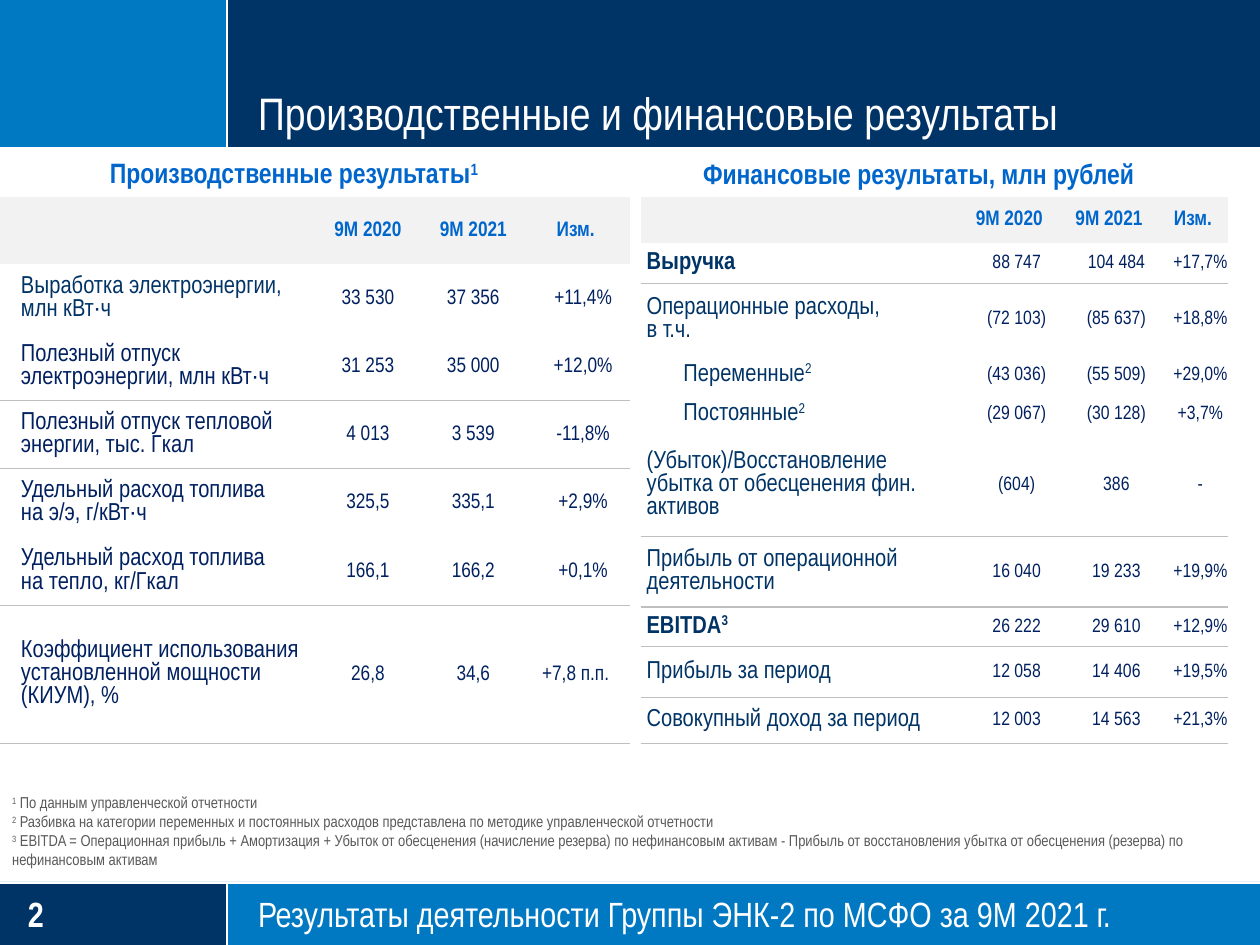
from pptx import Presentation
from pptx.dml.color import RGBColor
from pptx.enum.shapes import MSO_CONNECTOR, MSO_SHAPE
from pptx.enum.text import MSO_ANCHOR, PP_ALIGN
from pptx.oxml import parse_xml
from pptx.oxml.ns import nsdecls, qn
from pptx.util import Pt

RECTANGLE = MSO_SHAPE.RECTANGLE
STRAIGHT = MSO_CONNECTOR.STRAIGHT
TOP, MIDDLE, BOTTOM = MSO_ANCHOR.TOP, MSO_ANCHOR.MIDDLE, MSO_ANCHOR.BOTTOM
LEFT, CENTER = PP_ALIGN.LEFT, PP_ALIGN.CENTER

FONT = "Arial Narrow"
NAVY, BLUE, WHITE = "003366", "0079C2", "FFFFFF"
HEADING, FIGURE, FOOTNOTE = "0066CC", "002060", "595959"
HEADER_FILL, RULE = "F2F2F2", "BFBFBF"
PLAIN_TABLE_STYLE = "{2D5ABB26-0587-4C30-8999-92F81FD0307C}"


def color(value):
    return RGBColor.from_string(value)


def write(frame, text, size, text_color, bold=False, align=LEFT):
    """Fill a text frame; text between ^ marks is superscript."""
    for index, line in enumerate(text.split("\n")):
        paragraph = frame.add_paragraph() if index else frame.paragraphs[0]
        paragraph.alignment = align
        parts = line.split("^")
        paragraph.text = parts[0]
        for number, part in enumerate(parts[1:], 1):
            if part:
                run = paragraph.add_run()
                run.text = part
                if number % 2:
                    run._r.get_or_add_rPr().set("baseline", "30000")
        for run in paragraph.runs:
            run.font.name = FONT
            run.font.size = Pt(size)
            run.font.bold = bold
            run.font.color.rgb = color(text_color)


presentation = Presentation()
presentation.slide_width, presentation.slide_height = Pt(720), Pt(540)
slide = presentation.slides.add_slide(presentation.slide_layouts[5])

# Header and footer bands
for left, top, width, height, fill in [
    (0, 0, 720, 85, NAVY),
    (0, 504, 720, 36, BLUE),
    (0, 504.5, 129.5, 35.5, NAVY),
    (0, 0, 129.5, 85, BLUE),
]:
    band = slide.shapes.add_shape(RECTANGLE, Pt(left), Pt(top), Pt(width), Pt(height))
    band.shadow.inherit = False
    band.fill.solid()
    band.fill.fore_color.rgb = color(fill)
    band.line.fill.background()

# White dividers
for x1, y1, x2, y2 in [
    (0, 84.5, 720, 84.5),
    (129.5, 504, 129.5, 540),
    (0, 504.5, 720, 504.5),
    (129.5, 0, 129.5, 84.5),
]:
    divider = slide.shapes.add_connector(STRAIGHT, Pt(x1), Pt(y1), Pt(x2), Pt(y2))
    divider.line.color.rgb = color(WHITE)
    divider.line.width = Pt(1.25)
    divider._element.spPr.append(parse_xml(f"<a:effectLst {nsdecls('a')}/>"))

# Title, placed in front of the bands
title = slide.shapes.title
title.left, title.top, title.width, title.height = Pt(147.5), Pt(0), Pt(555), Pt(79.5)
frame = title.text_frame
frame.margin_left = frame.margin_right = frame.margin_top = frame.margin_bottom = 0
frame.vertical_anchor = BOTTOM
frame.word_wrap = True
write(frame, "Производственные и финансовые результаты", 26, WHITE)
slide.shapes._spTree.append(title._element)

# Table contents: label, 9М 2020, 9М 2021, change
header = ("", "9М 2020", "9М 2021", "Изм.")
production = [
    header,
    ("Выработка электроэнергии,\vмлн кВт∙ч", "33 530", "37 356", "+11,4%"),
    ("Полезный отпуск электроэнергии, млн кВт∙ч", "31 253", "35 000", "+12,0%"),
    ("Полезный отпуск тепловой энергии, тыс. Гкал", "4 013", "3 539", "-11,8%"),
    ("Удельный расход топлива\vна э/э, г/кВт∙ч", "325,5", "335,1", "+2,9%"),
    ("Удельный расход топлива\vна тепло, кг/Гкал", "166,1", "166,2", "+0,1%"),
    ("Коэффициент использования установленной мощности (КИУМ), %",
     "26,8", "34,6", "+7,8 п.п."),
]
finance = [
    header,
    ("Выручка", "88 747", "104 484", "+17,7%"),
    ("Операционные расходы,\nв т.ч.", "(72 103)", "(85 637)", "+18,8%"),
    ("Переменные^2", "(43 036)", "(55 509)", "+29,0%"),
    ("Постоянные^2", "(29 067)", "(30 128)", "+3,7%"),
    ("(Убыток)/Восстановление убытка от обесценения фин. активов", "(604)", "386", "-"),
    ("Прибыль от операционной деятельности", "16 040", "19 233", "+19,9%"),
    ("EBITDA^3", "26 222", "29 610", "+12,9%"),
    ("Прибыль за период", "12 058", "14 406", "+19,5%"),
    ("Совокупный доход за период", "12 003", "14 563", "+21,3%"),
]

# Tables: rows, left, column widths, row heights, ruled rows, figure size
for rows, left, widths, heights, ruled, figure_size in [
    (finance, 366, (181.5, 58.5, 55.5, 40.5),
     (26.5, 23, 41, 22.5, 22.5, 58.5, 40.5, 22.5, 29, 26.5), (1, 5, 6, 7, 8, 9), 11),
    (production, 0, (177.5, 65.5, 55, 62),
     (38.5, 39, 39, 39, 39, 39, 79), (2, 3, 5, 6), 12),
]:
    table_frame = slide.shapes.add_table(
        len(rows), 4, Pt(left), Pt(112.5), Pt(sum(widths)), Pt(sum(heights)))
    table = table_frame.table
    table.first_row = table.horz_banding = False
    table._tbl.tblPr.find(qn("a:tableStyleId")).text = PLAIN_TABLE_STYLE
    for column, width in zip(table.columns, widths):
        column.width = Pt(width)
    for row_index, (values, height) in enumerate(zip(rows, heights)):
        table.rows[row_index].height = Pt(height)
        for column_index, value in enumerate(values):
            cell = table.cell(row_index, column_index)
            cell.vertical_anchor = MIDDLE
            cell.margin_left = cell.margin_right = Pt(3.5)
            cell.margin_top = cell.margin_bottom = Pt(2)
            indent = 0
            if row_index == 0:
                cell.fill.solid()
                cell.fill.fore_color.rgb = color(HEADER_FILL)
                write(cell.text_frame, value, 12, HEADING, True, CENTER)
            elif column_index == 0:
                cell.fill.background()
                first_shade = rows is finance or row_index == 1
                bold = value in ("Выручка", "EBITDA^3")
                write(cell.text_frame, value, 14, NAVY if first_shade else FIGURE, bold)
                if rows is production:
                    indent = 8.5
                elif value.endswith("^2"):
                    indent = 21
            else:
                cell.fill.background()
                cell.margin_left = cell.margin_right = cell.margin_top = Pt(0.5)
                cell.margin_bottom = 0
                write(cell.text_frame, value, figure_size, FIGURE, align=CENTER)
                if rows is finance or (column_index == 3 and row_index < 6):
                    indent = 8.5
            if indent:
                for paragraph in cell.text_frame.paragraphs:
                    properties = paragraph._p.get_or_add_pPr()
                    properties.set("marL", str(Pt(indent)))
                    properties.set("indent", "0")
            if row_index in ruled:
                cell._tc.get_or_add_tcPr().insert(0, parse_xml(
                    f'<a:lnB {nsdecls("a")} w="{Pt(0.75)}"><a:solidFill>'
                    f'<a:srgbClr val="{RULE}"/></a:solidFill></a:lnB>'))

# Footnotes, footer, table headings and page number
footnotes = (
    "^1^ По данным управленческой отчетности\n"
    "^2^ Разбивка на категории переменных и постоянных расходов представлена "
    "по методике управленческой отчетности\n"
    "^3^ EBITDA = Операционная прибыль + Амортизация + Убыток от обесценения "
    "(начисление резерва) по нефинансовым активам - Прибыль от восстановления "
    "убытка от обесценения (резерва) по нефинансовым активам"
)
footer = "Результаты деятельности Группы ЭНК-2 по МСФО за 9М 2021 г."
for text, left, top, width, height, size, text_color, bold, align, anchor, wrap in [
    (footnotes, 7, 452, 705.5, 44.5, 9, FOOTNOTE, False, LEFT, BOTTOM, True),
    (footer, 147.5, 510, 555, 24.5, 20, WHITE, False, LEFT, MIDDLE, True),
    ("Производственные результаты^1", 60, 89, 216, 19.5, 16, HEADING, True, CENTER, TOP, False),
    ("Финансовые результаты, млн рублей", 396.5, 89.5, 257, 19.5, 16, HEADING, True, CENTER, TOP, False),
    ("2", 16, 510, 95, 24.5, 20, WHITE, True, LEFT, MIDDLE, True),
]:
    box = slide.shapes.add_textbox(Pt(left), Pt(top), Pt(width), Pt(height))
    frame = box.text_frame
    frame.margin_left = frame.margin_right = frame.margin_top = frame.margin_bottom = 0
    frame.vertical_anchor = anchor
    frame.word_wrap = wrap
    write(frame, text, size, text_color, bold, align)

presentation.save("out.pptx")
